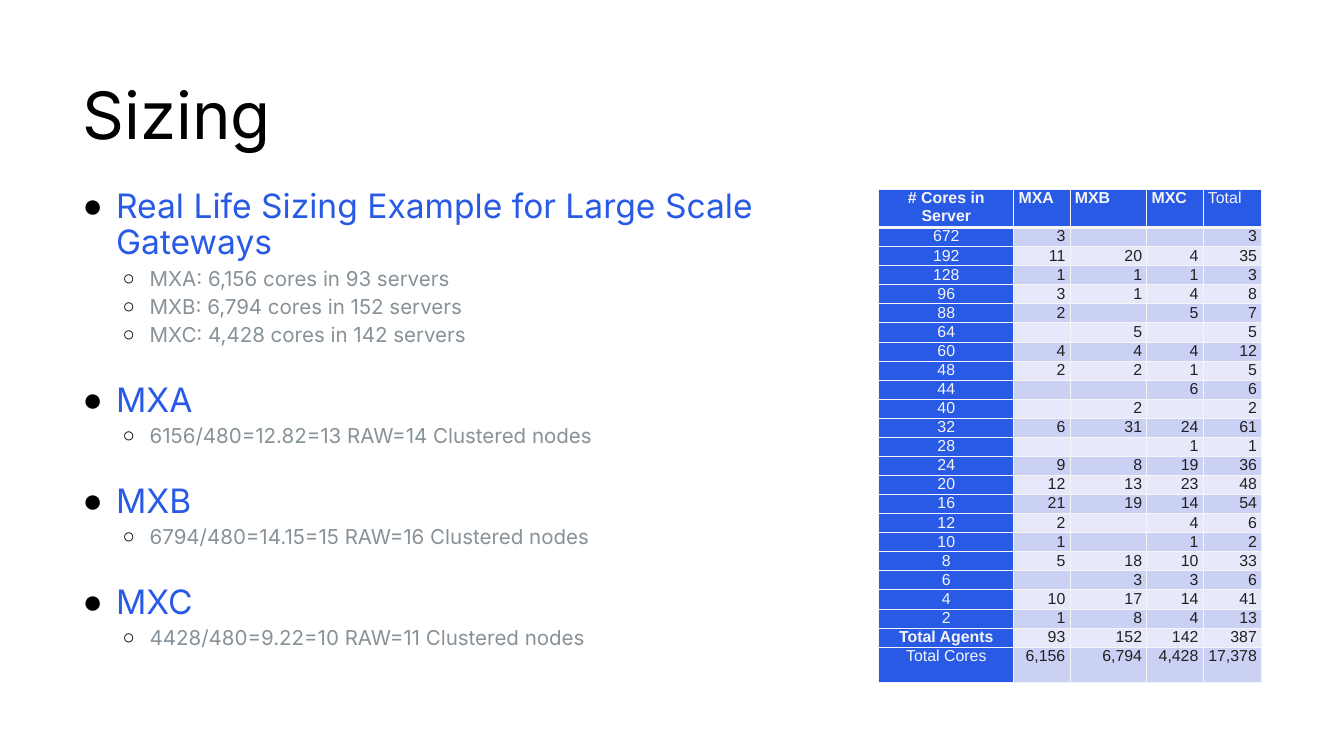
from lxml.etree import SubElement
from pptx import Presentation
from pptx.dml.color import RGBColor
from pptx.enum.text import PP_ALIGN
from pptx.oxml.ns import qn
from pptx.util import Cm, Pt

# Content
TITLE = "Sizing"
TOPICS = [
    ("Real Life Sizing Example for Large Scale Gateways", [
        "MXA: 6,156 cores in 93 servers",
        "MXB: 6,794 cores in 152 servers",
        "MXC: 4,428 cores in 142 servers",
    ]),
    ("MXA", ["6156/480=12.82=13 RAW=14 Clustered nodes"]),
    ("MXB", ["6794/480=14.15=15 RAW=16 Clustered nodes"]),
    ("MXC", ["4428/480=9.22=10 RAW=11 Clustered nodes"]),
]
ROWS = [
    ("# Cores in Server", "MXA", "MXB", "MXC", "Total"),
    ("672", "3", "", "", "3"),
    ("192", "11", "20", "4", "35"),
    ("128", "1", "1", "1", "3"),
    ("96", "3", "1", "4", "8"),
    ("88", "2", "", "5", "7"),
    ("64", "", "5", "", "5"),
    ("60", "4", "4", "4", "12"),
    ("48", "2", "2", "1", "5"),
    ("44", "", "", "6", "6"),
    ("40", "", "2", "", "2"),
    ("32", "6", "31", "24", "61"),
    ("28", "", "", "1", "1"),
    ("24", "9", "8", "19", "36"),
    ("20", "12", "13", "23", "48"),
    ("16", "21", "19", "14", "54"),
    ("12", "2", "", "4", "6"),
    ("10", "1", "", "1", "2"),
    ("8", "5", "18", "10", "33"),
    ("6", "", "3", "3", "6"),
    ("4", "10", "17", "14", "41"),
    ("2", "1", "8", "4", "13"),
    ("Total Agents", "93", "152", "142", "387"),
    ("Total Cores", "6,156", "6,794", "4,428", "17,378"),
]
BOLD = {"# Cores in Server", "MXA", "MXB", "MXC", "Total Agents"}
WIDTHS = [5.1, 2.13, 2.9, 2.13, 2.21]
LOW, TALL = 0.64, 1.32

BLUE, GREY, BLACK = "285AE6", "879198", "000000"
PALE, DARK = "F5F5F5", "212121"
BANDS = ["E7E9FA", "CBD0F5"]

# Bullet levels: mark, left margin, indent, line spacing, size, colour
LEVELS = [
    ("●", 1.27, -1.27, 0.9, 36, BLUE),
    ("○", 2.54, -1.02, 1.15, 22, GREY),
]


def paint(color):
    return RGBColor.from_string(color)


def style(para, face, size, color, bold=False):
    for run in para.runs:
        font = run.font
        font.name, font.size, font.bold = face, Pt(size), bold
        font.color.rgb = paint(color)


def add_box(slide, left, top, width, height):
    frame = slide.shapes.add_textbox(
        Cm(left), Cm(top), Cm(width), Cm(height)).text_frame
    frame.word_wrap = True
    frame.margin_left = frame.margin_right = 0
    frame.margin_top = frame.margin_bottom = 0
    return frame


def add_point(para, text, level):
    mark, left, indent, space, size, color = LEVELS[level]
    para.text = text
    para.level = level
    para.line_spacing = space
    props = para._p.get_or_add_pPr()
    props.set("marL", str(Cm(left)))
    props.set("indent", str(Cm(indent)))
    tint = SubElement(props, qn("a:buClr"))
    SubElement(tint, qn("a:srgbClr"), val=BLACK)
    SubElement(props, qn("a:buFont"), typeface="Arial")
    SubElement(props, qn("a:buChar"), char=mark)
    style(para, "Inter", size, color)


def add_edges(cell, row):
    props = cell._tc.get_or_add_tcPr()
    heavy = {0: "lnB", 1: "lnT"}.get(row)
    for place, side in enumerate(("lnL", "lnR", "lnT", "lnB")):
        width = Pt(3 if side == heavy else 1)
        line = props.makeelement(qn("a:" + side), {"w": str(width)})
        fill = SubElement(line, qn("a:solidFill"))
        SubElement(fill, qn("a:srgbClr"), val=PALE)
        props.insert(place, line)


def fill_cell(cell, text, row, col):
    head = row == 0 or col == 0
    cell.margin_left = cell.margin_right = Cm(0.18)
    cell.margin_top = cell.margin_bottom = 0
    cell.fill.solid()
    cell.fill.fore_color.rgb = paint(BLUE if head else BANDS[row % 2])
    add_edges(cell, row)
    para = cell.text_frame.paragraphs[0]
    para.text = text
    if col == 0:
        para.alignment = PP_ALIGN.CENTER
    else:
        para.alignment = PP_ALIGN.LEFT if row == 0 else PP_ALIGN.RIGHT
    style(para, "Arial", 17, PALE if head else DARK, head and text in BOLD)
    if not text:
        # Keeps an empty cell as low as its neighbours
        SubElement(para._p, qn("a:endParaRPr"), sz="1700")


def main():
    deck = Presentation()
    deck.slide_width, deck.slide_height = Cm(50.8), Cm(28.58)
    slide = deck.slides.add_slide(deck.slide_layouts[6])

    # Title
    para = add_box(slide, 3.12, 3.15, 44.55, 3.18).paragraphs[0]
    para.text = TITLE
    para.line_spacing = 0.9
    style(para, "Inter", 70, BLACK)

    # Bullets
    frame = add_box(slide, 3.12, 7.16, 29.44, 18.64)
    for order, (topic, notes) in enumerate(TOPICS):
        para = frame.add_paragraph() if order else frame.paragraphs[0]
        add_point(para, topic, 0)
        if order:
            para.space_before = Pt(39)
        for note in notes:
            add_point(frame.add_paragraph(), note, 1)

    # Table of servers
    heights = [TALL] + [LOW] * (len(ROWS) - 2) + [TALL]
    table = slide.shapes.add_table(
        len(ROWS), len(WIDTHS), Cm(33.22), Cm(7.16),
        Cm(sum(WIDTHS)), Cm(sum(heights))).table
    for column, width in zip(table.columns, WIDTHS):
        column.width = Cm(width)
    for row, (texts, height) in enumerate(zip(ROWS, heights)):
        table.rows[row].height = Cm(height)
        for col, text in enumerate(texts):
            fill_cell(table.cell(row, col), text, row, col)

    deck.save("out.pptx")


if __name__ == "__main__":
    main()
